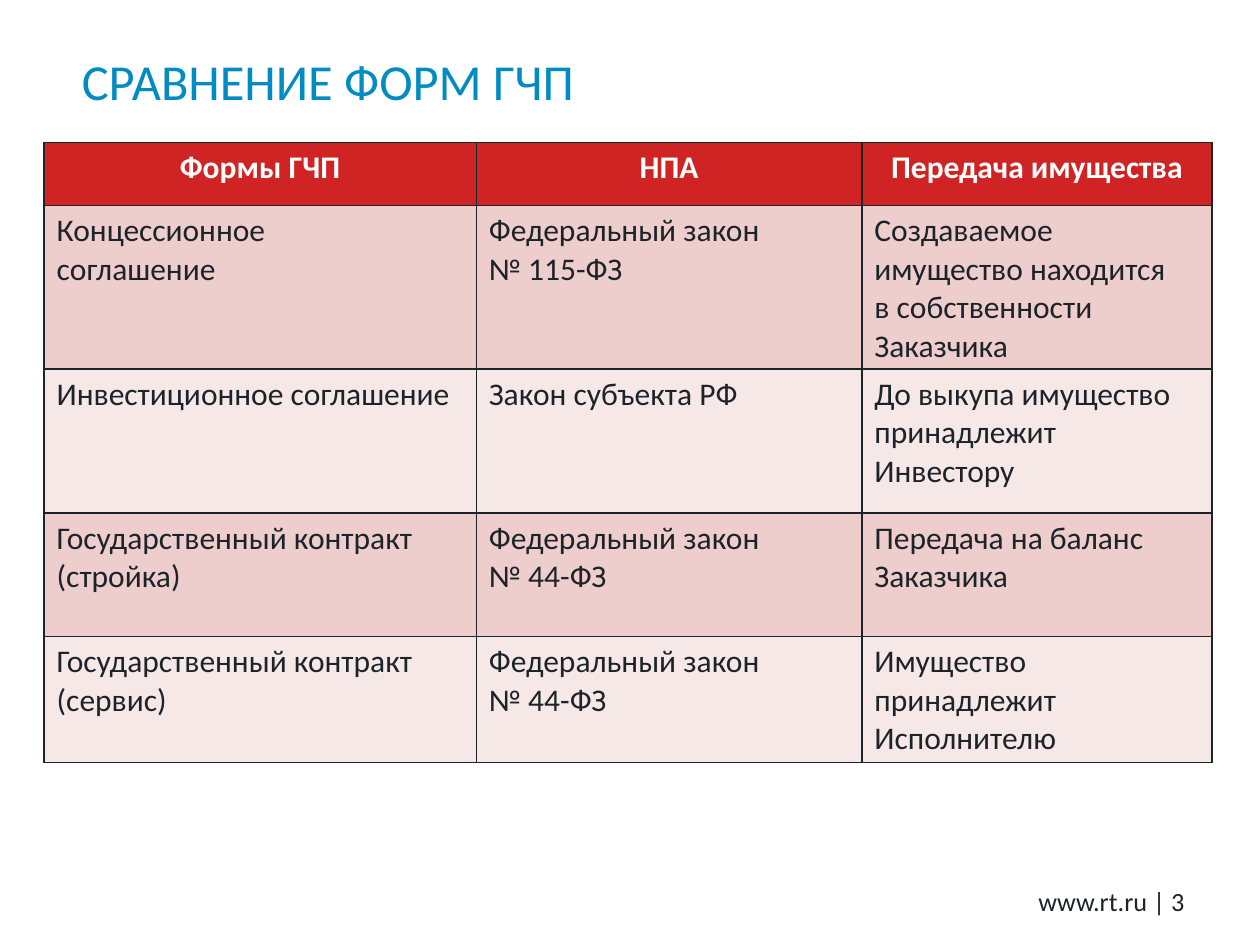
from dataclasses import dataclass

from lxml.etree import SubElement
from pptx import Presentation
from pptx.dml.color import RGBColor
from pptx.enum.text import MSO_ANCHOR as Anchor, PP_ALIGN as Align
from pptx.oxml.ns import qn
from pptx.util import Inches, Pt


@dataclass(frozen=True)
class Theme:
    font: str = "Calibri"
    ink: str = "1C2329"
    white: str = "FFFFFF"
    title: str = "008CC2"
    header: str = "D02324"
    bands: tuple = ("EECDCD", "F7E8E8")
    title_size: float = 28.8
    table_size: float = 18
    footer_size: float = 15
    border_width: float = 1


THEME = Theme()

HEADINGS = ("Формы ГЧП", "НПА", "Передача имущества")
FORMS = (
    ("Концессионное\nсоглашение", "Федеральный закон\n№ 115-ФЗ",
     "Создаваемое имущество находится\nв собственности Заказчика"),
    ("Инвестиционное соглашение", "Закон субъекта РФ",
     "До выкупа имущество принадлежит Инвестору"),
    ("Государственный контракт (стройка)", "Федеральный закон\n№ 44-ФЗ",
     "Передача на баланс Заказчика"),
    ("Государственный контракт (сервис)", "Федеральный закон\n№ 44-ФЗ",
     "Имущество принадлежит Исполнителю"),
)
COLUMN_WIDTHS = (3.43, 3.06, 2.78)
ROW_HEIGHTS = (0.5, 0.98, 1.14, 0.98, 0.98)


def write(frame, text, size, color=THEME.ink, bold=False, align=Align.LEFT):
    frame.word_wrap = True
    para = frame.paragraphs[0]
    para.alignment = align
    for index, line in enumerate(text.split("\n")):
        if index:
            para.add_line_break()
        span = para.add_run()
        span.text = line
        span.font.name = THEME.font
        span.font.size = Pt(size)
        span.font.bold = bold
        span.font.color.rgb = RGBColor.from_string(color)


def add_text(page, box, text, anchor=Anchor.TOP, inset=0.0, **style):
    frame = page.shapes.add_textbox(*map(Inches, box)).text_frame
    frame.vertical_anchor = anchor
    frame.margin_left = frame.margin_right = Inches(inset)
    frame.margin_top = frame.margin_bottom = Inches(inset / 2)
    write(frame, text, **style)


def add_borders(cell):
    properties = cell._tc.get_or_add_tcPr()
    for side in ("a:lnL", "a:lnR", "a:lnT", "a:lnB"):
        line = SubElement(properties, qn(side), w=str(Pt(THEME.border_width)))
        fill = SubElement(line, qn("a:solidFill"))
        SubElement(fill, qn("a:srgbClr"), val=THEME.ink)


def fill_cell(cell, text, fill, **style):
    add_borders(cell)
    cell.fill.solid()
    cell.fill.fore_color.rgb = RGBColor.from_string(fill)
    write(cell.text_frame, text, THEME.table_size, **style)


def add_title(page, box):
    add_text(page, box, "СРАВНЕНИЕ ФОРМ ГЧП", size=THEME.title_size,
             color=THEME.title)


def add_comparison(page, left, top):
    table = page.shapes.add_table(
        len(ROW_HEIGHTS), len(COLUMN_WIDTHS), Inches(left), Inches(top),
        Inches(sum(COLUMN_WIDTHS)), Inches(sum(ROW_HEIGHTS))).table
    for column, width in zip(table.columns, COLUMN_WIDTHS):
        column.width = Inches(width)
    for row, height in zip(table.rows, ROW_HEIGHTS):
        row.height = Inches(height)
    for cell, heading in zip(table.rows[0].cells, HEADINGS):
        fill_cell(cell, heading, THEME.header, color=THEME.white, bold=True,
                  align=Align.CENTER)
    for index, form in enumerate(FORMS):
        band = THEME.bands[index % len(THEME.bands)]
        for cell, text in zip(table.rows[index + 1].cells, form):
            fill_cell(cell, text, band)


def add_footer(page, box):
    add_text(page, box, "www.rt.ru | 3", anchor=Anchor.MIDDLE, inset=0.1,
             size=THEME.footer_size, align=Align.RIGHT)


def main():
    deck = Presentation()
    deck.slide_width, deck.slide_height = Inches(10), Inches(7.5)
    page = deck.slides.add_slide(deck.slide_layouts[6])
    add_footer(page, (7.92, 6.95, 1.58, 0.4))
    add_title(page, (0.65, 0.4, 8.78, 0.51))
    add_comparison(page, 0.35, 1.13)
    deck.save("out.pptx")


if __name__ == "__main__":
    main()
